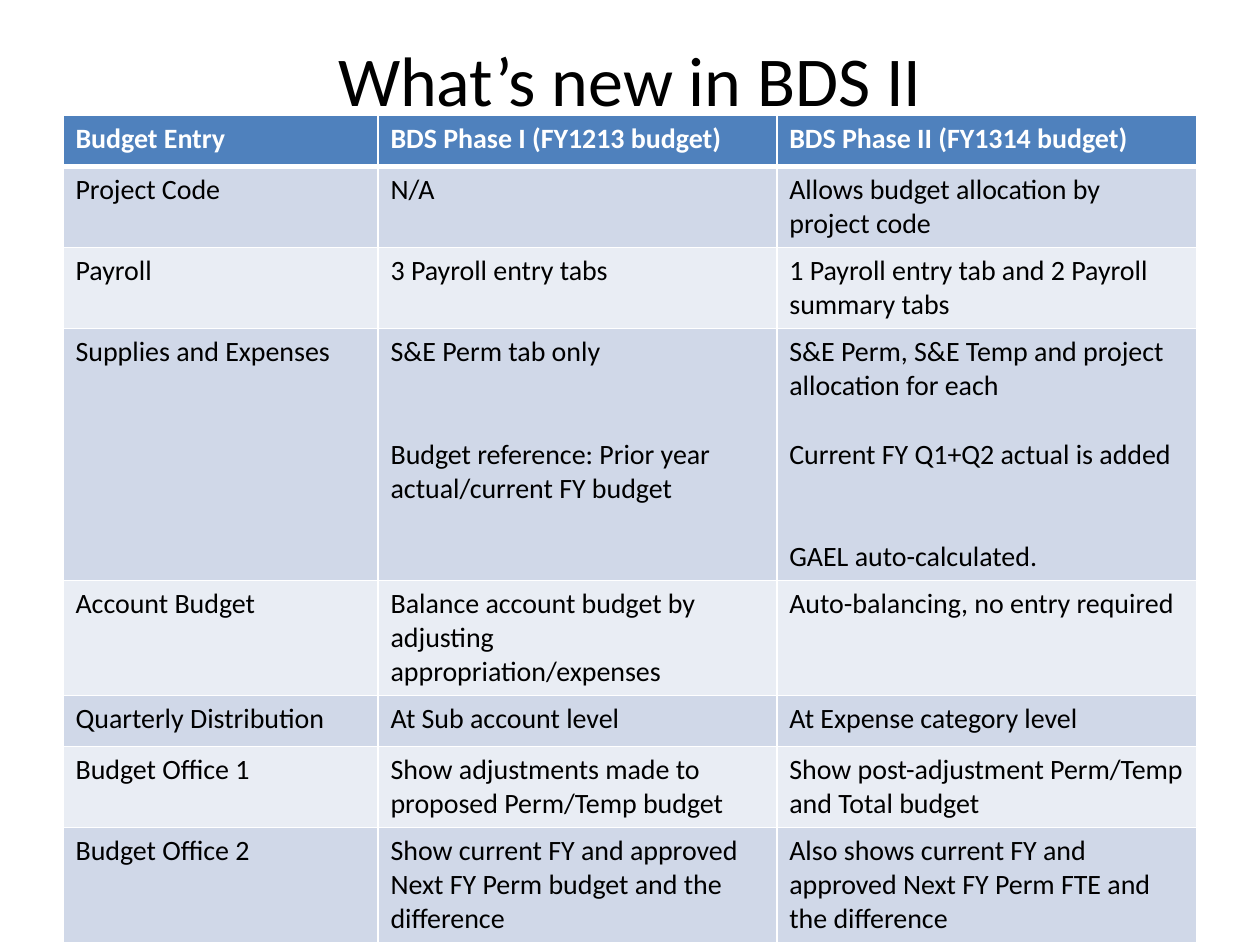
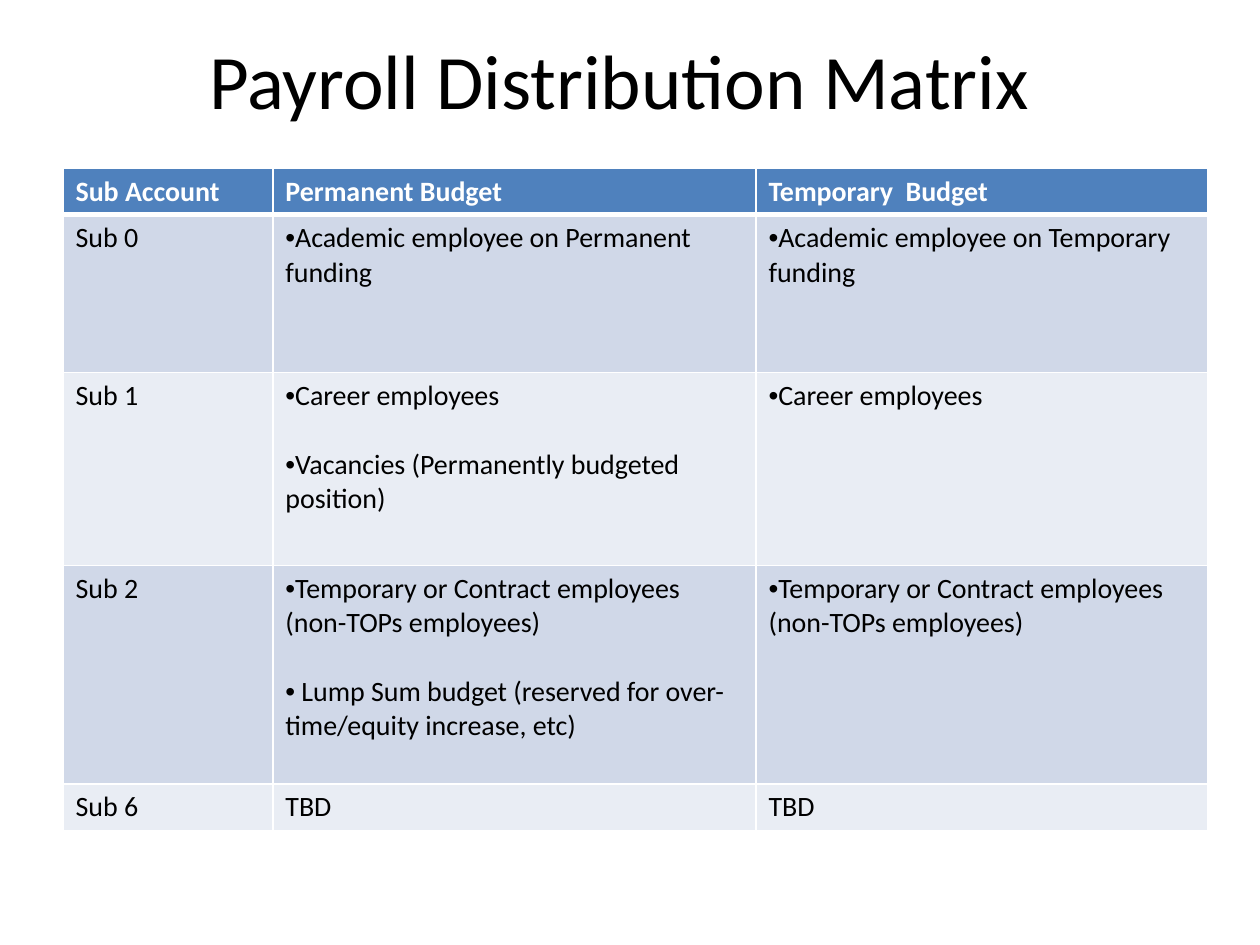
from lxml.etree import SubElement
from pptx import Presentation
from pptx.dml.color import RGBColor
from pptx.enum.text import MSO_ANCHOR as Anchor, PP_ALIGN as Align
from pptx.oxml.ns import qn
from pptx.util import Cm, Pt

BULLET = "•"


def color(hex_string):
    return RGBColor.from_string(hex_string)


class Deck:
    """Holds the shared style and the current slide."""
    font_name, bullet_font = "Calibri", "Arial"
    text_color = "000000"
    header_fill, header_text = "4F81BD", "FFFFFF"
    band_fills = ("E9EDF4", "D0D8E8")
    border_color = "FFFFFF"
    body_size = 16
    line_height = 19.6

    def __init__(self):
        self.presentation = Presentation()
        self.presentation.slide_width = Cm(25.4)
        self.presentation.slide_height = Cm(19.05)
        self.slide = None

    def add_slide(self):
        blank = self.presentation.slide_layouts[6]
        self.slide = self.presentation.slides.add_slide(blank)

    def set_font(self, paragraph, size, hex_string, bold=False):
        font = paragraph.font
        font.name, font.size, font.bold = self.font_name, Pt(size), bold
        font.color.rgb = color(hex_string)

    def title(self, text, left, size):
        box = self.slide.shapes.add_textbox(Cm(left), 0, Cm(22.86), Cm(3.18))
        frame = box.text_frame
        frame.word_wrap = True
        frame.vertical_anchor = Anchor.MIDDLE
        paragraph = frame.paragraphs[0]
        paragraph.text = text
        paragraph.alignment = Align.CENTER
        self.set_font(paragraph, size, self.text_color)

    def table(self, top, column_widths, row_heights, rows):
        shape = self.slide.shapes.add_table(
            len(rows), len(column_widths), Cm(1.27), Cm(top),
            Cm(sum(column_widths)), Cm(sum(row_heights)))
        table = shape.table
        table.horz_banding = False
        for column, width in zip(table.columns, column_widths):
            column.width = Cm(width)
        for row, height in zip(table.rows, row_heights):
            row.height = Cm(height)
        for row_index, contents in enumerate(rows):
            for cell, content in zip(table.rows[row_index].cells, contents):
                self.cell(cell, content, row_index)

    def cell(self, cell, content, row_index):
        is_header = row_index == 0
        self.borders(cell, row_index)
        cell.fill.solid()
        cell.fill.fore_color.rgb = color(
            self.header_fill if is_header else self.band_fills[row_index % 2])
        # A cell is one text, or a list of (text, lines of space above)
        items = [(content, 0)] if isinstance(content, str) else content
        for index, (text, lines_above) in enumerate(items):
            frame = cell.text_frame
            paragraph = frame.add_paragraph() if index else frame.paragraphs[0]
            paragraph.space_before = Pt(lines_above * self.line_height)
            self.set_font(paragraph, self.body_size,
                          self.header_text if is_header else self.text_color,
                          is_header)
            if text.startswith(BULLET):
                self.bullet(paragraph)
            paragraph.text = text.removeprefix(BULLET)

    def bullet(self, paragraph):
        properties = paragraph._p.get_or_add_pPr()
        properties.set("marL", "0")
        properties.set("indent", "0")
        defaults = properties.find(qn("a:defRPr"))
        for tag, attributes in (("a:buFont", {"typeface": self.bullet_font}),
                                ("a:buChar", {"char": BULLET})):
            defaults.addprevious(properties.makeelement(qn(tag), attributes))

    def borders(self, cell, row_index):
        properties = cell._tc.get_or_add_tcPr()
        widths = {"L": 1, "R": 1, "T": 3 if row_index == 1 else 1,
                  "B": 3 if row_index == 0 else 1}
        for side, width in widths.items():
            line = SubElement(properties, qn(f"a:ln{side}"), w=str(Pt(width)))
            fill = SubElement(line, qn("a:solidFill"))
            SubElement(fill, qn("a:srgbClr"), val=self.border_color)


def main():
    deck = Deck()

    # Comparison of the two phases
    deck.add_slide()
    deck.title("What’s new in BDS II", 1.27, 40)
    phases = [
        ("Budget Entry", "BDS Phase I (FY1213 budget)",
         "BDS Phase II (FY1314 budget)"),
        ("Project Code", "N/A", "Allows budget allocation by project code"),
        ("Payroll", "3 Payroll entry tabs",
         "1 Payroll entry tab and 2 Payroll summary tabs"),
        ("Supplies and Expenses",
         [("S&E Perm tab only", 0),
          ("Budget reference: Prior year actual/current FY budget", 2)],
         [("S&E Perm, S&E Temp and project allocation for each", 0),
          ("Current FY Q1+Q2 actual is added", 1),
          ("GAEL auto-calculated.", 2)]),
        ("Account Budget",
         "Balance account budget by adjusting appropriation/expenses",
         "Auto-balancing, no entry required"),
        ("Quarterly Distribution", "At Sub account level",
         "At Expense category level"),
        ("Budget Office 1",
         "Show adjustments made to proposed Perm/Temp budget",
         "Show post-adjustment Perm/Temp and Total budget"),
        ("Budget Office 2",
         "Show current FY and approved Next FY Perm budget and the difference",
         "Also shows current FY and approved Next FY Perm FTE and the "
         "difference"),
    ]
    one_line, two_lines, three_lines, seven_lines = 1.03, 1.63, 2.32, 5.08
    deck.table(2.33, (6.35, 8.04, 8.46),
               (one_line, two_lines, two_lines, seven_lines, three_lines,
                one_line, two_lines, three_lines), phases)

    # Payroll by sub account
    deck.add_slide()
    deck.title("Payroll Distribution Matrix", 1.06, 44)
    contract = "•Temporary or Contract employees  (non-TOPs employees)"
    sub_accounts = [
        ("Sub Account", "Permanent Budget", "Temporary  Budget"),
        ("Sub 0", "•Academic employee on Permanent funding",
         "•Academic employee on Temporary funding"),
        ("Sub 1",
         [("•Career employees", 0),
          ("•Vacancies (Permanently budgeted position)", 1)],
         "•Career employees"),
        ("Sub 2",
         [(contract, 0),
          ("• Lump Sum budget (reserved for over-time/equity increase, etc)",
           1)],
         contract),
        ("Sub 6", "TBD", "TBD"),
    ]
    deck.table(3.39, (4.23, 9.74, 9.1), (0.94, 3.18, 3.89, 4.4, 0.94),
               sub_accounts)

    deck.presentation.save("out.pptx")


if __name__ == "__main__":
    main()
